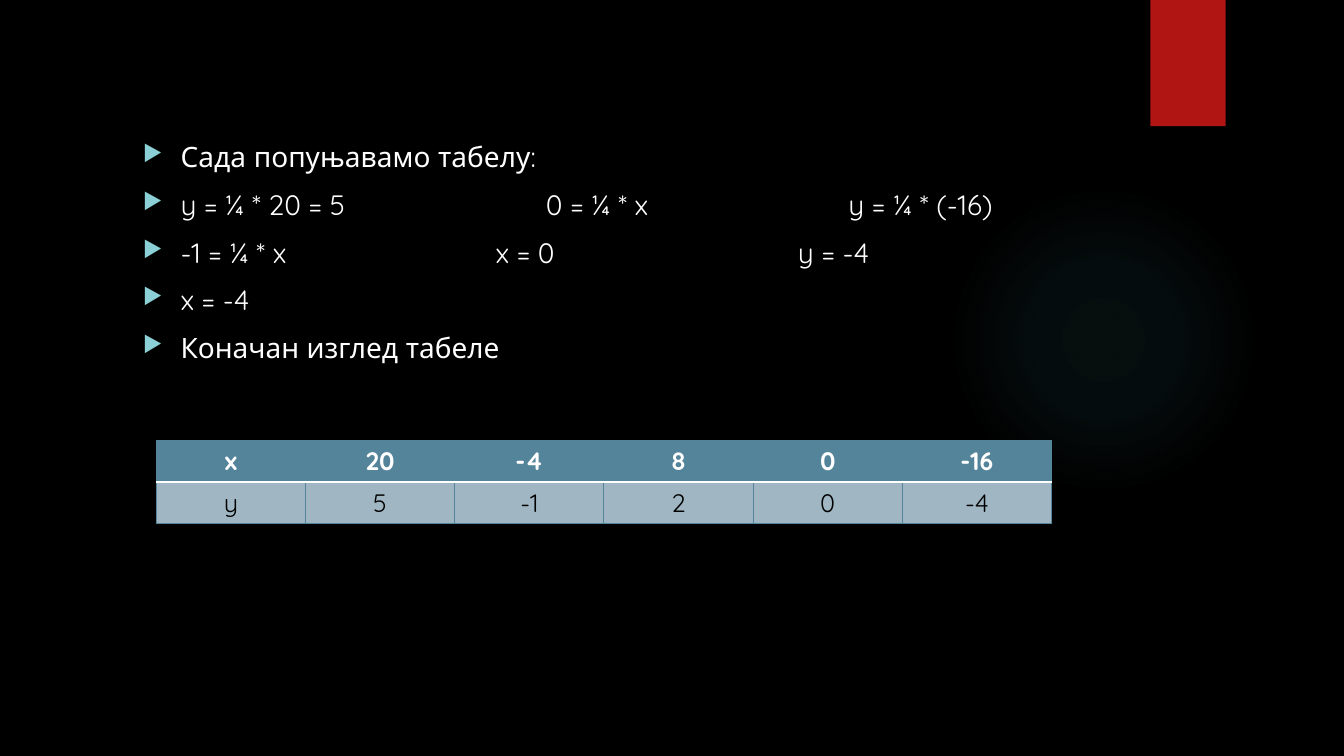
from dataclasses import dataclass

from lxml.etree import SubElement
from pptx import Presentation
from pptx.dml.color import RGBColor
from pptx.enum.shapes import MSO_SHAPE as Shape
from pptx.enum.text import MSO_ANCHOR as Anchor, PP_ALIGN as Align
from pptx.oxml import parse_xml
from pptx.oxml.ns import nsdecls, qn
from pptx.util import Cm, Pt

FONT = "Quicksand"
WHITE = "FFFFFF"
BLACK = "000000"
STEEL = "54849A"
PALE = "A0B7C3"
AQUA = "8AD0D6"
RED = "B01513"
GLOW = "50B9C1"


@dataclass
class Line:
    text: str
    tabs: tuple[float, ...] = ()


@dataclass
class Row:
    cells: list[str]
    fill: str
    ink: str
    bold: bool
    top: str
    base: str


LINES = [
    Line("Сада попуњавамо табелу:"),
    Line("y = ¼ * 20 = 5\t0 = ¼ * x\ty = ¼ * (-16)", (10.16, 17.78)),
    Line("-1 = ¼ * x\tx = 0\ty = -4", (8.89, 16.51)),
    Line("x = -4"),
    Line("Коначан изглед табеле"),
]
ROWS = [
    Row(["x", "20", "-4", "8", "0", "-16"], STEEL, WHITE, True, STEEL, WHITE),
    Row(["y", "5", "-1", "2", "0", "-4"], PALE, BLACK, False, WHITE, STEEL),
]


def paint(tone: str) -> RGBColor:
    return RGBColor.from_string(tone)


def add_run(para, text: str, size: int, ink: str, bold: bool = False) -> None:
    run = para.add_run()
    run.text = text
    font = run.font
    font.name, font.size, font.bold = FONT, Pt(size), bold
    font.color.rgb = paint(ink)


def add_shape(slide, kind, left: float, top: float, width: float, height: float):
    shape = slide.shapes.add_shape(kind, Cm(left), Cm(top), Cm(width), Cm(height))
    shape.shadow.inherit = False
    shape.line.fill.background()
    return shape


def add_glow(slide) -> None:
    shape = add_shape(slide, Shape.OVAL, 23.9, 4.65, 7.82, 7.82)
    stops = "".join(
        f'<a:gs pos="{spot * 1000}"><a:srgbClr val="{GLOW}">'
        f'<a:alpha val="{alpha * 1000}"/></a:srgbClr></a:gs>'
        for spot, alpha in ((0, 7), (36, 6), (69, 0))
    )
    shape.fill.solid()
    props = shape._element.spPr
    props.replace(props.find(qn("a:solidFill")), parse_xml(
        f'<a:gradFill {nsdecls("a")}><a:gsLst>{stops}</a:gsLst>'
        '<a:path path="circle"><a:fillToRect l="50000" t="50000" r="50000" b="50000"/>'
        '</a:path></a:gradFill>'
    ))


def add_mark(para, tabs: tuple[float, ...]) -> None:
    props = para._p.get_or_add_pPr()
    props.set("marL", str(Cm(0.95)))
    props.set("indent", str(-Cm(0.95)))
    tint = SubElement(props, qn("a:buClr"))
    SubElement(tint, qn("a:srgbClr"), val=AQUA)
    SubElement(props, qn("a:buSzPct"), val="80000")
    SubElement(props, qn("a:buChar"), char="▶")
    if tabs:
        stops = SubElement(props, qn("a:tabLst"))
        for stop in tabs:
            SubElement(stops, qn("a:tab"), pos=str(Cm(stop)), algn="l")


def add_lines(slide) -> None:
    box = slide.shapes.add_textbox(Cm(3.35), Cm(3.4), Cm(24.84), Cm(11.66))
    frame = box.text_frame
    frame.word_wrap = True
    for index, line in enumerate(LINES):
        para = frame.add_paragraph() if index else frame.paragraphs[0]
        add_mark(para, line.tabs)
        para.space_before = Pt(10 if index else 0)
        add_run(para, line.text, 20, WHITE)


def add_edge(cell, side: str, tone: str) -> None:
    width = 1.5 if tone == WHITE else 0.75
    props = cell._tc.get_or_add_tcPr()
    edge = SubElement(props, qn(f"a:ln{side}"), w=str(Pt(width)))
    fill = SubElement(edge, qn("a:solidFill"))
    SubElement(fill, qn("a:srgbClr"), val=tone)


def add_grid(slide) -> None:
    count = len(ROWS[0].cells)
    wide, high = 3.76, 1.05
    table = slide.shapes.add_table(
        len(ROWS), count, Cm(3.94), Cm(11.09), Cm(wide * count), Cm(high * len(ROWS))
    ).table
    for column in table.columns:
        column.width = Cm(wide)
    for y, row in enumerate(ROWS):
        table.rows[y].height = Cm(high)
        for x, text in enumerate(row.cells):
            cell = table.cell(y, x)
            for side, tone in zip("LRTB", (STEEL, STEEL, row.top, row.base)):
                add_edge(cell, side, tone)
            cell.fill.solid()
            cell.fill.fore_color.rgb = paint(row.fill)
            cell.vertical_anchor = Anchor.TOP
            para = cell.text_frame.paragraphs[0]
            para.alignment = Align.CENTER
            add_run(para, text, 18, row.ink, row.bold)


def main() -> None:
    deck = Presentation()
    deck.slide_width, deck.slide_height = Cm(33.87), Cm(19.05)
    slide = deck.slides.add_slide(deck.slide_layouts[6])
    back = slide.background.fill
    back.solid()
    back.fore_color.rgb = paint(BLACK)
    add_glow(slide)
    flag = add_shape(slide, Shape.RECTANGLE, 28.99, 0, 1.9, 3.18)
    flag.fill.solid()
    flag.fill.fore_color.rgb = paint(RED)
    add_lines(slide)
    add_grid(slide)
    deck.save("out.pptx")


if __name__ == "__main__":
    main()
